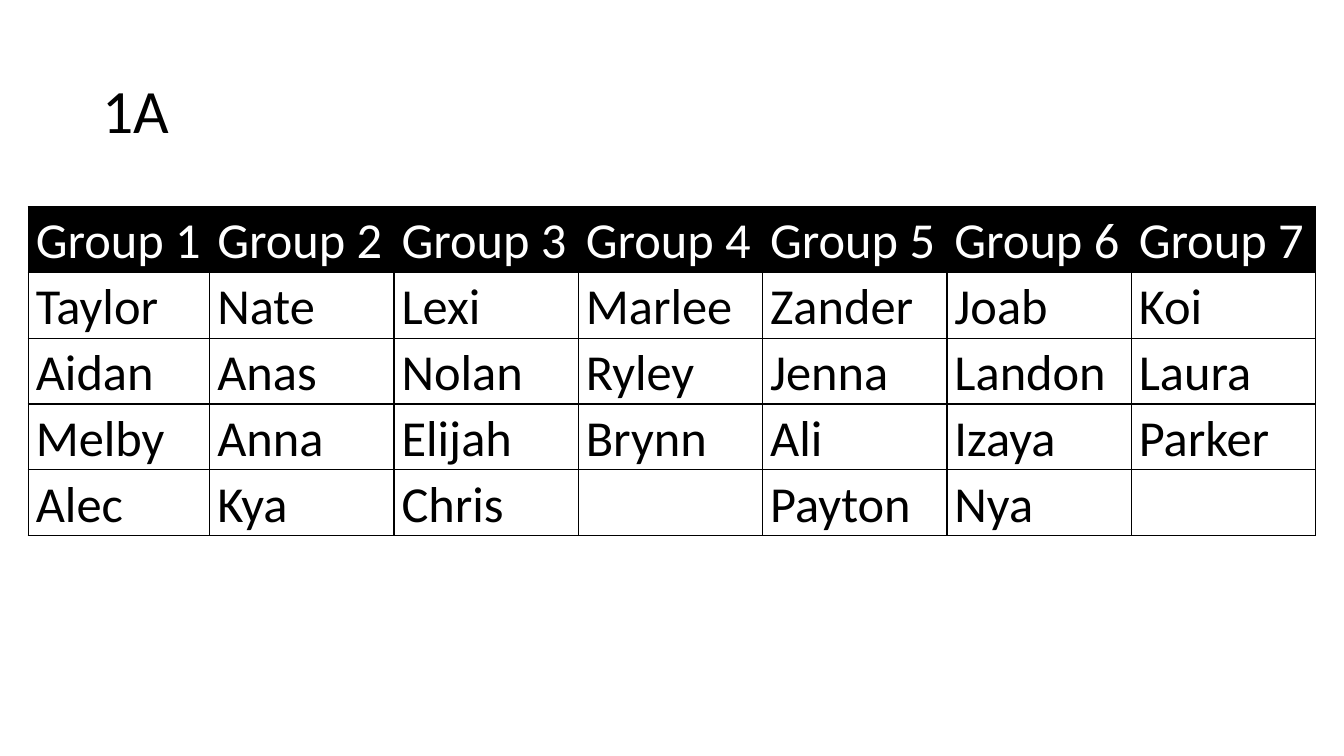
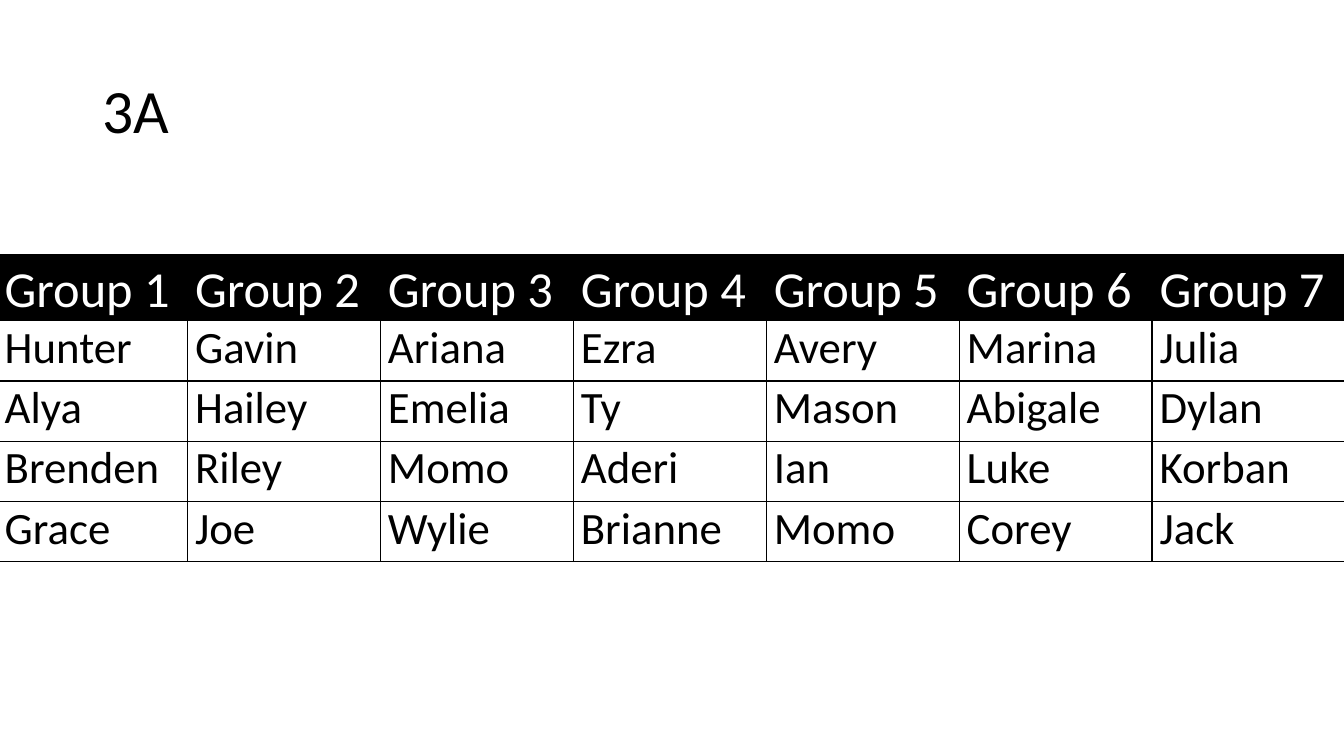
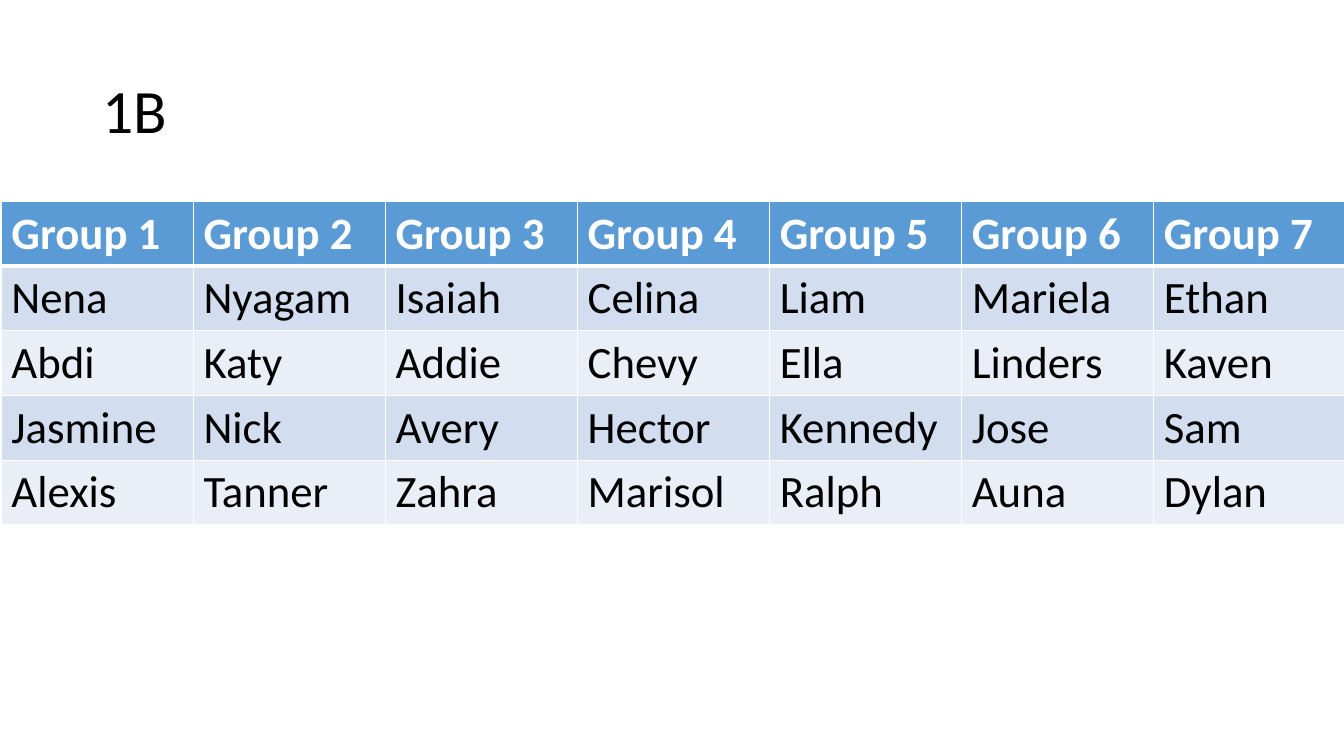
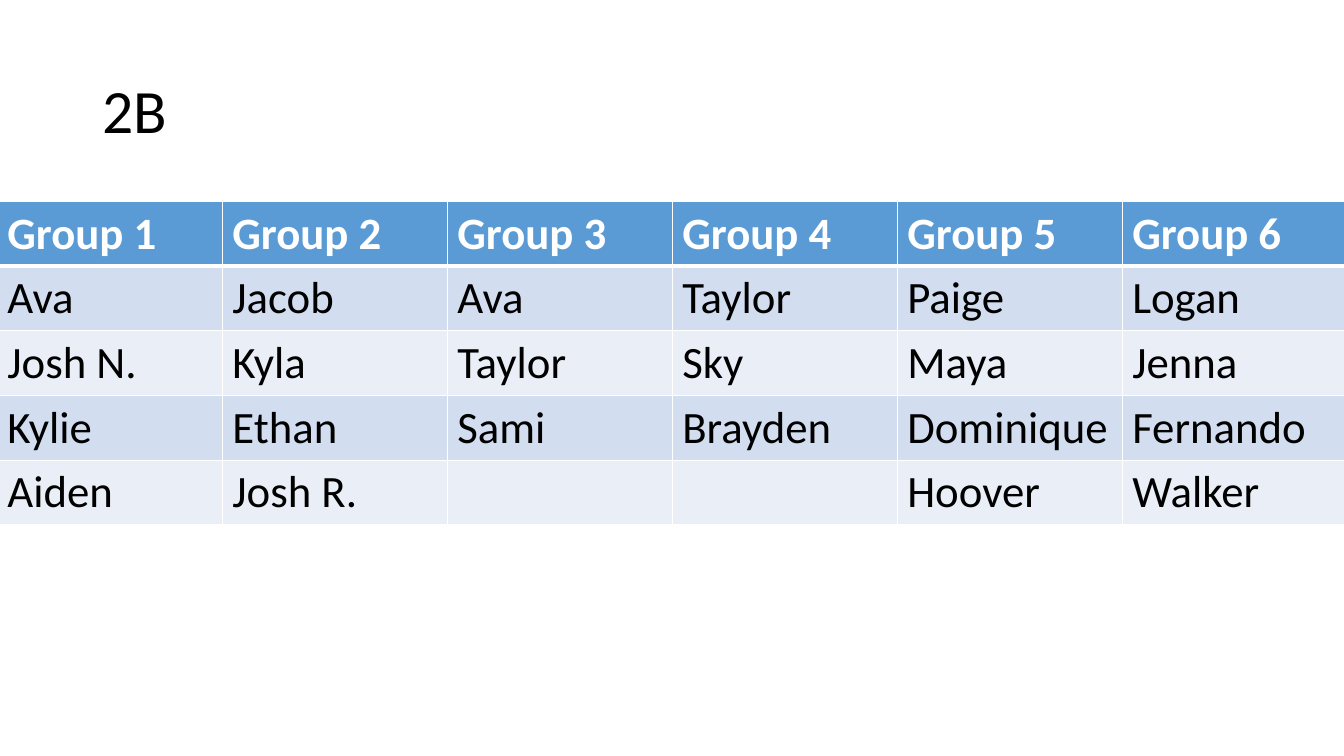
from lxml import etree
from pptx import Presentation
from pptx.dml.color import RGBColor
from pptx.enum.text import MSO_ANCHOR
from pptx.oxml.ns import qn
from pptx.util import Pt

MIDDLE = MSO_ANCHOR.MIDDLE
FONT = "Calibri"
COLORS = {
    "black": "000000",
    "white": "FFFFFF",
    "blue": "5B9BD5",
    "band_dark": "D2DEEF",
    "band_light": "EAEFF7",
}

# Table styles: sizes, insets and row heights in points
GRID = dict(
    header_fill="black", body_fills=[None], border="black", rule=1,
    bold=False, header_size=36, body_size=36, header_spacing=1.07,
    body_spacing=1.07, inset_x=5.4, inset_y=0, header_height=47, body_height=47,
)
COMPACT_GRID = dict(
    GRID, body_fills=["white"], body_size=32, body_spacing=1, body_height=43.1,
)
BANDED = dict(
    header_fill="blue", body_fills=["band_dark", "band_light"], border="white",
    rule=3, bold=True, header_size=32, body_size=32, header_spacing=1,
    body_spacing=1, inset_x=7.2, inset_y=3.6, header_height=46.2, body_height=46.2,
)

# One entry per class; the first column may differ in width from the rest
CLASSES = [
    dict(title="1A", style=GRID, left=20.2, top=147.6, first_width=129.6, width=131.65, names=[
        ["Taylor", "Nate", "Lexi", "Marlee", "Zander", "Joab", "Koi"],
        ["Aidan", "Anas", "Nolan", "Ryley", "Jenna", "Landon", "Laura"],
        ["Melby", "Anna", "Elijah", "Brynn", "Ali", "Izaya", "Parker"],
        ["Alec", "Kya", "Chris", "", "Payton", "Nya", ""],
    ]),
    dict(title="3A", style=COMPACT_GRID, left=-2, top=182, first_width=136, width=137.8, names=[
        ["Hunter", "Gavin", "Ariana", "Ezra", "Avery", "Marina", "Julia"],
        ["Alya", "Hailey", "Emelia", "Ty", "Mason", "Abigale", "Dylan"],
        ["Brenden", "Riley", "Momo", "Aderi", "Ian", "Luke", "Korban"],
        ["Grace", "Joe", "Wylie", "Brianne", "Momo", "Corey", "Jack"],
    ]),
    dict(title="1B", style=BANDED, left=1, top=144, first_width=137.2, width=137.2, names=[
        ["Nena", "Nyagam", "Isaiah", "Celina", "Liam", "Mariela", "Ethan"],
        ["Abdi", "Katy", "Addie", "Chevy", "Ella", "Linders", "Kaven"],
        ["Jasmine", "Nick", "Avery", "Hector", "Kennedy", "Jose", "Sam"],
        ["Alexis", "Tanner", "Zahra", "Marisol", "Ralph", "Auna", "Dylan"],
    ]),
    dict(title="2B", style=BANDED, left=-1.9, top=144, first_width=160.7, width=160.7, names=[
        ["Ava", "Jacob", "Ava", "Taylor", "Paige", "Logan"],
        ["Josh N.", "Kyla", "Taylor", "Sky", "Maya", "Jenna"],
        ["Kylie", "Ethan", "Sami", "Brayden", "Dominique", "Fernando"],
        ["Aiden", "Josh R.", "", "", "Hoover", "Walker"],
    ]),
]


def rgb(name):
    return RGBColor.from_string(COLORS[name])


def write(tf, text, size, color, spacing, bold=False):
    p = tf.paragraphs[0]
    p.line_spacing = spacing
    if not text:
        return
    r = p.add_run()
    r.text = text
    r.font.name = FONT
    r.font.size = Pt(size)
    r.font.bold = bold
    r.font.color.rgb = rgb(color)


def add_title(s, text):
    sp = s.shapes.add_textbox(Pt(66), Pt(28.75), Pt(828), Pt(104.4))
    tf = sp.text_frame
    tf.word_wrap = True
    tf.vertical_anchor = MIDDLE
    write(tf, text, 44, "black", 0.9)


def set_borders(cell, color, top, bottom):
    tc_pr = cell._tc.get_or_add_tcPr()
    for side, width in (("L", 1), ("R", 1), ("T", top), ("B", bottom)):
        ln = etree.SubElement(tc_pr, qn(f"a:ln{side}"), w=str(Pt(width)))
        fill = etree.SubElement(ln, qn("a:solidFill"))
        etree.SubElement(fill, qn("a:srgbClr"), val=COLORS[color])


def format_cell(cell, row, text, style):
    header = row == 0
    part = "header" if header else "body"
    fills = style["body_fills"]
    fill = style["header_fill"] if header else fills[(row - 1) % len(fills)]
    cell.margin_left = cell.margin_right = Pt(style["inset_x"])
    cell.margin_top = cell.margin_bottom = Pt(style["inset_y"])
    # The header and the first body row share the heavier rule
    set_borders(cell, style["border"],
                top=style["rule"] if row == 1 else 1,
                bottom=style["rule"] if header else 1)
    if fill:
        cell.fill.solid()
        cell.fill.fore_color.rgb = rgb(fill)
    else:
        cell.fill.background()
    write(cell.text_frame, text, style[f"{part}_size"],
          "white" if header else "black", style[f"{part}_spacing"],
          header and style["bold"])


def add_group_table(s, style, left, top, first_width, width, names):
    count = len(names[0])
    rows = [[f"Group {i + 1}" for i in range(count)]] + names
    widths = [first_width] + [width] * (count - 1)
    heights = [style["header_height"]] + [style["body_height"]] * len(names)
    table = s.shapes.add_table(len(rows), count, Pt(left), Pt(top),
                               Pt(sum(widths)), Pt(sum(heights))).table
    table.horz_banding = False
    for column, w in zip(table.columns, widths):
        column.width = Pt(w)
    for i, (row, height) in enumerate(zip(rows, heights)):
        table.rows[i].height = Pt(height)
        for j, text in enumerate(row):
            format_cell(table.cell(i, j), i, text, style)


def main():
    prs = Presentation()
    prs.slide_width, prs.slide_height = Pt(960), Pt(540)
    for group_class in CLASSES:
        s = prs.slides.add_slide(prs.slide_layouts[6])
        table_args = dict(group_class)
        add_title(s, table_args.pop("title"))
        add_group_table(s, **table_args)
    prs.save("out.pptx")


if __name__ == "__main__":
    main()
